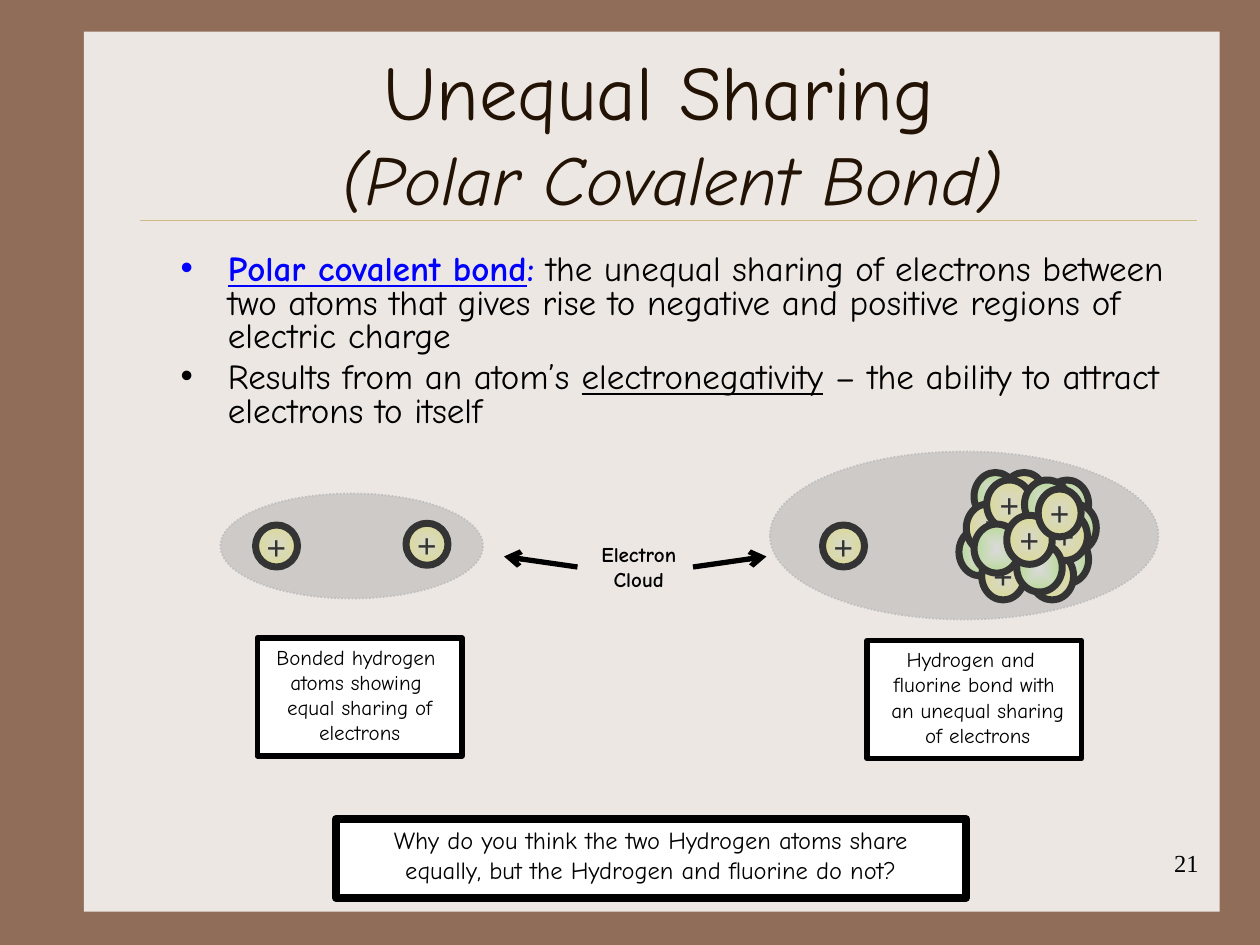
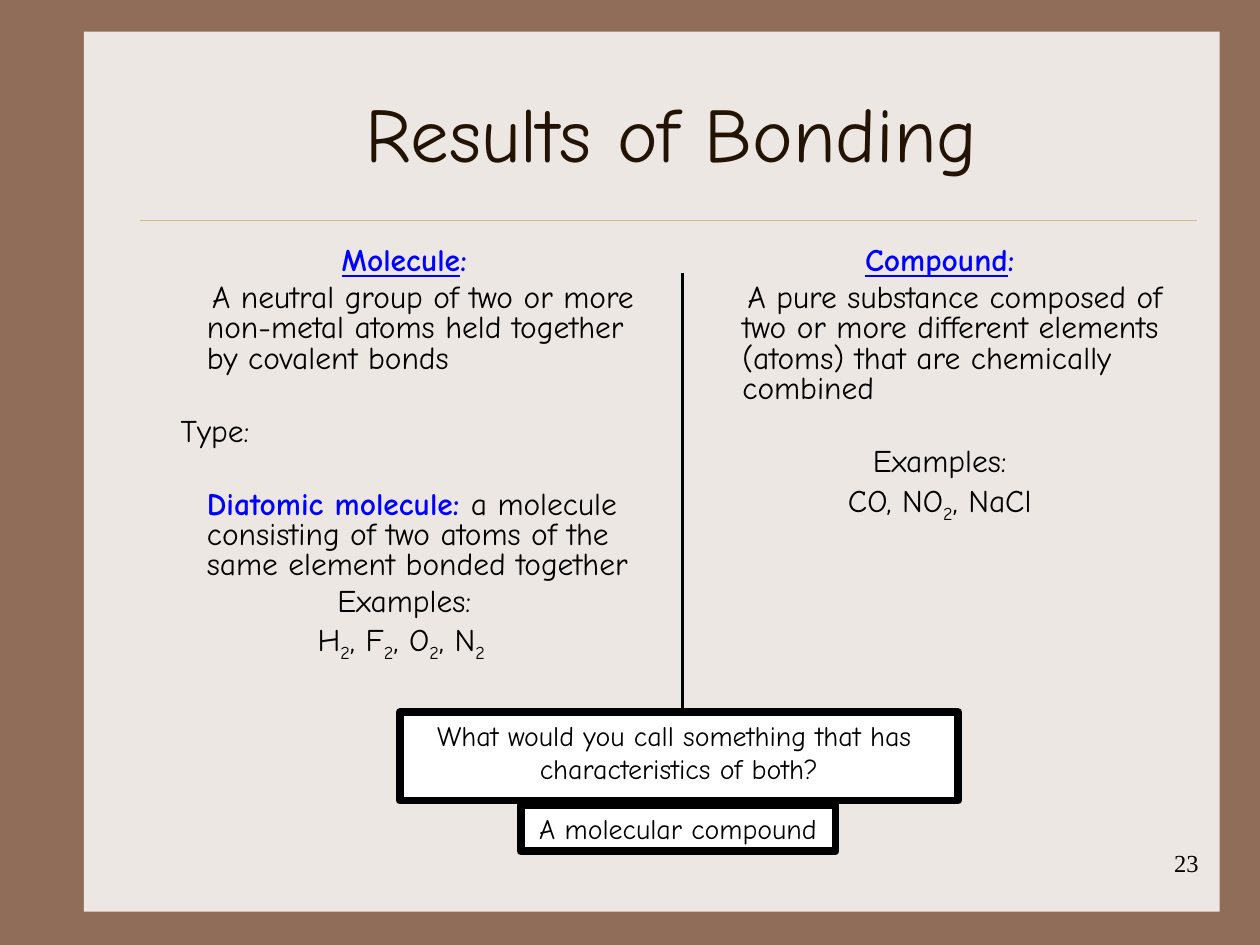
from dataclasses import dataclass

from lxml.etree import SubElement
from pptx import Presentation
from pptx.dml.color import RGBColor
from pptx.enum.dml import MSO_LINE
from pptx.enum.shapes import MSO_CONNECTOR, MSO_SHAPE
from pptx.enum.text import MSO_ANCHOR, MSO_AUTO_SIZE, PP_ALIGN
from pptx.oxml.ns import qn
from pptx.util import Pt


@dataclass(frozen=True)
class Theme:
    brown: str = "906D58"
    paper: str = "EDE7E3"
    rule: str = "CBBD83"
    title: str = "221304"
    ink: str = "000000"
    term: str = "0000FF"
    white: str = "FFFFFF"
    cloud: str = "969696"
    cloud_edge: str = "C0C0C0"
    proton: tuple = ("FEFDE3", "FFFF99")
    neutron: tuple = ("FFFFFF", "CCFF99")
    font: str = "Comic Neue"
    number_font: str = "Times New Roman"
    title_size: int = 44
    subtitle_size: int = 40
    body_size: int = 20
    column_size: int = 18
    plus_size: int = 20
    answer_size: int = 16
    question_size: int = 14
    caption_size: int = 12


THEME = Theme()

# Text formats: run values, then paragraph layouts
TERM = {"bold": True, "underline": True, "color": THEME.term}
TERM_PLAIN = {"bold": True, "color": THEME.term}
UNDERLINED = {"underline": True}
SUBSCRIPT = {"baseline": "-25000"}
BREAK = "\v"

HANGING = 27
BULLETED = {"margin": HANGING, "indent": -HANGING, "bullet": "•"}
DEFINITION = {"margin": HANGING, "indent": 3}
FLUSH = {"margin": HANGING, "indent": 0, "gap": 24.4}
LABEL = {"margin": HANGING, "indent": -15, "gap": 24.4}
CENTRED = {"alignment": PP_ALIGN.CENTER}
CENTRED_APART = {"alignment": PP_ALIGN.CENTER, "gap": 24.4}

# Content: a paragraph is (layout, spans), a span is (text, format)
SHARING_TITLE = [
    ("Unequal Sharing ", {}),
    (BREAK, {}),
    ("(Polar Covalent Bond)", {"italic": True, "size": Pt(THEME.subtitle_size)}),
]
SHARING_POINTS = [
    (BULLETED, [
        ("Polar covalent bond", TERM), (":", TERM_PLAIN),
        (" the unequal sharing of electrons between two atoms that gives rise "
         "to negative and positive regions of electric charge", {}),
    ]),
    (BULLETED, [
        ("Results from an atom’s ", {}), ("electronegativity", UNDERLINED),
        (" – the ability to attract electrons to itself", {}),
    ]),
]
# Captions: lines, position, size, border, type size
HYDROGEN_CAPTION = (["Bonded hydrogen ", "atoms showing ", "equal sharing of", "electrons"],
                    (147, 364.5, 117, 67.5), 3, THEME.caption_size)
FLUORIDE_CAPTION = (["Hydrogen and ", "fluorine bond with", " an unequal sharing", " of electrons"],
                    (495.5, 366, 122.5, 67.5), 3, THEME.caption_size)
SHARING_QUESTION = (["Why do you think the two Hydrogen atoms share",
                     "equally, but the Hydrogen and fluorine do not?"],
                    (192, 468, 360, 45), 4.5, THEME.question_size)

BONDING_TITLE = [("Results of Bonding", {})]
MOLECULE = [
    (CENTRED, [("Molecule", TERM), (":", TERM_PLAIN)]),
    (DEFINITION, [("A neutral group of two or more non-metal atoms held together "
                   "by covalent bonds", {})]),
    (LABEL, [("Type:", {})]),
    (FLUSH, [("Diatomic molecule: ", TERM_PLAIN),
             ("a molecule consisting of two atoms of the same element bonded together", {})]),
    (CENTRED, [("Examples:", {})]),
    (CENTRED, [("H", {}), ("2", SUBSCRIPT), (", F", {}), ("2", SUBSCRIPT),
               (", O", {}), ("2", SUBSCRIPT), (", N", {}), ("2 ", SUBSCRIPT)]),
]
COMPOUND = [
    (CENTRED, [("Compound", TERM), (":", TERM_PLAIN)]),
    (DEFINITION, [("A pure substance composed of two or more different elements "
                   "(atoms) that are chemically combined", {})]),
    (CENTRED_APART, [("Examples:", {})]),
    (CENTRED, [("CO, NO", {}), ("2", SUBSCRIPT), (", NaCl", {})]),
]
BONDING_QUESTION = (["What would you call something that has ", "characteristics of both?"],
                    (228.5, 407, 319, 50.5), 4.5, THEME.answer_size)
BONDING_ANSWER = (["A molecular compound"], (297.5, 460, 180, 26.5), 4.5, THEME.answer_size)

# Fluorine nucleus, back to front: kind, left, top, size
SMALL, LARGE, SINGLE = (24.5, 27.4), (26, 28), (24, 24)
NUCLEUS = [
    ("neutron", 597.6, 274.3, SMALL), ("neutron", 548, 301.7, SMALL),
    ("neutron", 602, 288, SMALL), ("neutron", 597.6, 306, SMALL),
    ("neutron", 556.6, 270, SMALL), ("proton", 589, 315.4, SMALL),
    ("proton", 573, 270, SMALL), ("proton", 552.2, 288, SMALL),
    ("proton", 561, 315.4, SMALL), ("proton", 563.8, 274.3, LARGE),
    ("neutron", 585.4, 274.3, LARGE), ("proton", 595.4, 292.3, LARGE),
    ("neutron", 556.6, 299.5, LARGE), ("neutron", 581, 310.3, LARGE),
    ("proton", 575.3, 294.5, LARGE), ("proton", 593.3, 279.4, SMALL),
]
HYDROGENS = [("proton", 146, 300, SINGLE), ("proton", 232, 299, SINGLE),
             ("proton", 470, 300, SINGLE)]
CLOUDS = [(126, 282, 150, 60), (440, 258, 222, 96)]
CLOUD_ARROWS = [((396, 324), (438, 318)), ((330, 324), (288, 318))]


def rgb(value):
    return RGBColor.from_string(value)


def points(lengths):
    return [Pt(length) for length in lengths]


# Text
def add_span(para, text, values, size, color, font=THEME.font):
    if text == BREAK:
        para.add_line_break()
        return
    span = para.add_run()
    span.text = text
    values = {"name": font, "size": Pt(size), "color": color, **values}
    for name, value in values.items():
        if name == "color":
            span.font.color.rgb = rgb(value)
        elif name == "baseline":
            span._r.get_or_add_rPr().set("baseline", value)
        else:
            setattr(span.font, name, value)


def write_lines(shape, lines, size, wrap=False, anchor=MSO_ANCHOR.TOP,
                align=PP_ALIGN.CENTER, **values):
    frame = shape.text_frame
    frame.word_wrap = wrap
    frame.vertical_anchor = anchor
    for number, line in enumerate(lines):
        para = frame.add_paragraph() if number else frame.paragraphs[0]
        para.alignment = align
        add_span(para, line, values, size, THEME.ink)


def set_layout(para, layout, gap):
    properties = para._p.get_or_add_pPr()
    properties.set("marL", str(Pt(layout.get("margin", 0))))
    properties.set("indent", str(Pt(layout.get("indent", 0))))
    if "bullet" in layout:
        SubElement(properties, qn("a:buChar"), char=layout["bullet"])
    else:
        SubElement(properties, qn("a:buNone"))
    para.alignment = layout.get("alignment", PP_ALIGN.LEFT)
    para.line_spacing = 0.8
    para.space_before = Pt(gap)


def fill_body(holder, paragraphs, place, size):
    holder.left, holder.top, holder.width, holder.height = points(place)
    frame = holder.text_frame
    frame.auto_size = MSO_AUTO_SIZE.NONE
    for number, (layout, spans) in enumerate(paragraphs):
        para = frame.add_paragraph() if number else frame.paragraphs[0]
        set_layout(para, layout, layout.get("gap", size / 5) if number else 0)
        for text, values in spans:
            add_span(para, text, values, size, THEME.ink)


# Shapes
def add_outlined(shapes, kind, place, fill, line, weight):
    shape = shapes.add_shape(kind, *points(place))
    shape.shadow.inherit = False
    if fill:
        shape.fill.solid()
        shape.fill.fore_color.rgb = rgb(fill)
    if line:
        shape.line.color.rgb = rgb(line)
        shape.line.width = Pt(weight)
    else:
        shape.line.fill.background()
    return shape


def add_line(shapes, start, end, color, weight, arrow=False):
    line = shapes.add_connector(MSO_CONNECTOR.STRAIGHT, *points(start + end))
    line.line.color.rgb = rgb(color)
    line.line.width = Pt(weight)
    if arrow:
        SubElement(line.line._get_or_add_ln(), qn("a:tailEnd"), type="arrow")
    SubElement(line.element.spPr, qn("a:effectLst"))
    return line


def add_particle(shapes, kind, left, top, size):
    ball = add_outlined(shapes, MSO_SHAPE.OVAL, (left, top, *size), None, THEME.ink, 4)
    ball.fill.gradient()
    for stop, color in zip(ball.fill.gradient_stops, getattr(THEME, kind)):
        stop.color.rgb = rgb(color)
    gradient = ball.element.spPr.find(qn("a:gradFill"))
    for linear in gradient.findall(qn("a:lin")):
        gradient.remove(linear)
    radial = SubElement(gradient, qn("a:path"), {"path": "shape"})
    SubElement(radial, qn("a:fillToRect"), dict.fromkeys("ltrb", "50000"))
    if kind == "proton":
        write_lines(ball, ["+"], THEME.plus_size, anchor=MSO_ANCHOR.MIDDLE,
                    name=THEME.number_font, bold=True)


def add_cloud(shapes, place):
    cloud = add_outlined(shapes, MSO_SHAPE.OVAL, place, THEME.cloud, THEME.cloud_edge, 1)
    cloud.line.dash_style = MSO_LINE.ROUND_DOT
    color = cloud.element.spPr.find(qn("a:solidFill"))[0]
    SubElement(color, qn("a:alpha"), val="35000")


def add_caption(shapes, caption, wrap=False):
    lines, place, weight, size = caption
    box = add_outlined(shapes, MSO_SHAPE.RECTANGLE, place, THEME.white, THEME.ink, weight)
    write_lines(box, lines, size, wrap)


# Shared page parts
def dress_master(deck, page):
    master = deck.slide_master
    master.background.fill.solid()
    master.background.fill.fore_color.rgb = rgb(THEME.brown)
    panel = add_outlined(page.shapes, MSO_SHAPE.RECTANGLE, (48, 18, 649, 503),
                         THEME.paper, None, 0)
    rule = add_line(page.shapes, (80, 126), (684, 126), THEME.rule, 0.25)
    for order, part in enumerate((panel, rule)):
        part.element.xpath(".//p:cNvPr")[0].set("id", str(101 + order))
        master.shapes.element.insert(2 + order, part.element)


def add_page(deck, layout, title, number):
    page = deck.slides.add_slide(deck.slide_layouts.get_by_name(layout))
    heading = page.shapes.title
    heading.left, heading.top, heading.width, heading.height = points((84, 30, 600, 90))
    heading.text_frame.auto_size = MSO_AUTO_SIZE.NONE
    heading.text_frame.vertical_anchor = MSO_ANCHOR.MIDDLE
    para = heading.text_frame.paragraphs[0]
    para.alignment = PP_ALIGN.CENTER
    for text, values in title:
        add_span(para, text, values, THEME.title_size, THEME.title)
    box = page.shapes.add_textbox(*points((542, 481, 150, 36)))
    write_lines(box, [number], THEME.question_size, wrap=True,
                align=PP_ALIGN.RIGHT, name=THEME.number_font)
    return page


def build_sharing(deck):
    page = add_page(deck, "Title and Content", SHARING_TITLE, "21")
    shapes = page.shapes
    fill_body(page.placeholders[1], SHARING_POINTS, (96, 142, 582, 114), THEME.body_size)
    nucleus = shapes.add_group_shape()
    for particle in NUCLEUS:
        add_particle(nucleus.shapes, *particle)
    for particle in HYDROGENS:
        add_particle(shapes, *particle)
    for place in CLOUDS:
        add_cloud(shapes, place)
    for caption in (HYDROGEN_CAPTION, FLUORIDE_CAPTION):
        add_caption(shapes, caption)
    add_caption(shapes, SHARING_QUESTION, wrap=True)
    label = shapes.add_textbox(*points((334, 306, 62, 36)))
    write_lines(label, ["Electron", "Cloud"], THEME.caption_size, bold=True)
    for start, end in CLOUD_ARROWS:
        add_line(shapes, start, end, THEME.ink, 3, arrow=True)
    return page


def build_bonding(deck):
    page = add_page(deck, "Two Content", BONDING_TITLE, "23")
    for index, column in enumerate((MOLECULE, COMPOUND)):
        fill_body(page.placeholders[index + 1], column,
                  (84 + 306 * index, 138, 294, 300), THEME.column_size)
    add_line(page.shapes, (390, 156), (390, 432), THEME.ink, 2.25)
    for caption in (BONDING_QUESTION, BONDING_ANSWER):
        add_caption(page.shapes, caption)


def main():
    deck = Presentation()
    deck.slide_width, deck.slide_height = points((720, 540))
    dress_master(deck, build_sharing(deck))
    build_bonding(deck)
    deck.save("out.pptx")


if __name__ == "__main__":
    main()
